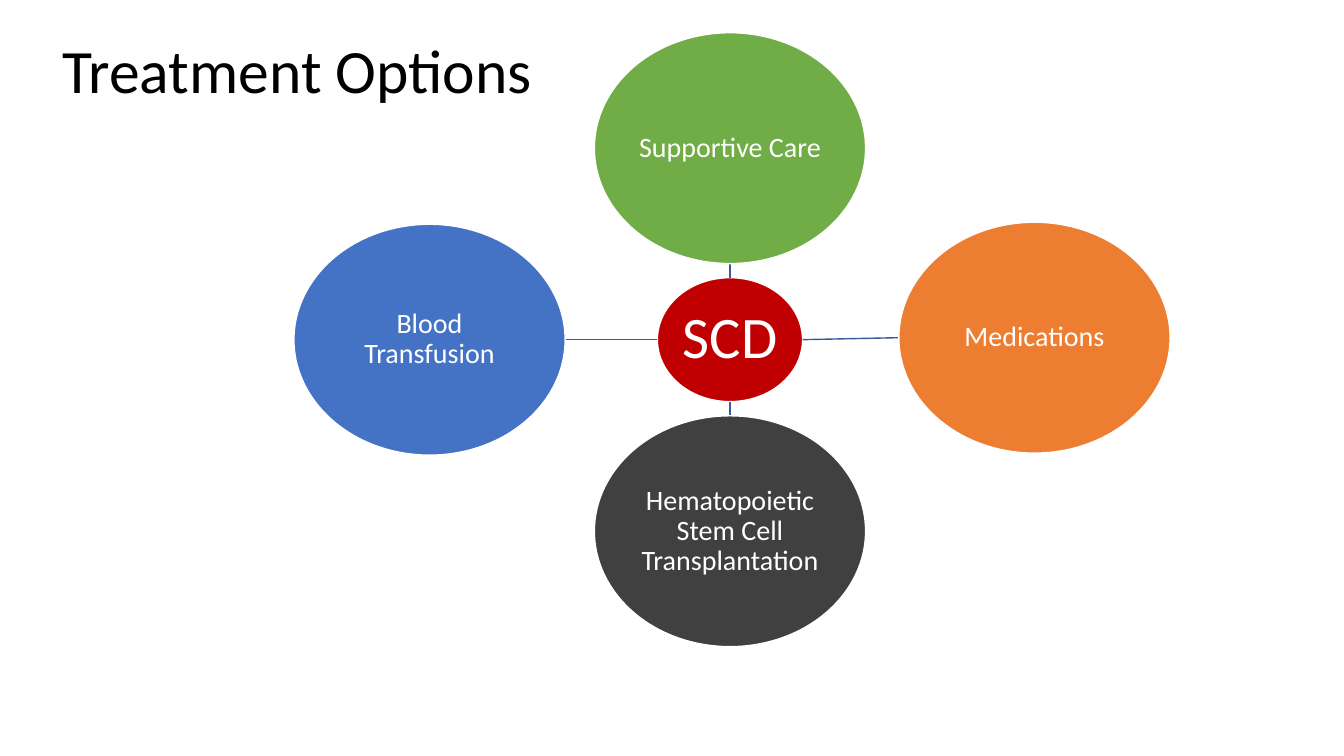
"""Build the Treatment Options slide: four therapies linked to a central SCD hub."""
from pptx import Presentation
from pptx import util as u
from pptx.dml.color import RGBColor
from pptx.enum import shapes, text
from pptx.oxml.ns import qn
from lxml import etree

COLORS = {"black": "000000", "white": "FFFFFF", "hub": "C00000", "link": "365B9D",
          "green": "70AD47", "orange": "ED7D31", "gray": "404040", "blue": "4472C4"}
HUB_X, HUB_Y = 7.24, 3.37
HUB_SIZE = (1.44, 1.23)
OPTION_SIZE = (2.69, 2.29)


def write(shape, words, size, color, align, inset):
    frame = shape.text_frame
    frame.word_wrap = True
    frame.vertical_anchor = text.MSO_ANCHOR.MIDDLE
    frame.margin_left = frame.margin_right = u.Inches(inset)
    frame.margin_top = frame.margin_bottom = u.Inches(inset / 2)
    para = frame.paragraphs[0]
    para.alignment = align
    para.line_spacing = 0.9
    span = para.add_run()
    span.text = words
    span.font.name = "Calibri"
    span.font.size = u.Pt(size)
    span.font.color.rgb = RGBColor.from_string(COLORS[color])


def add_circle(page, words, x, y, size, fill, points):
    width, height = size
    circle = page.shapes.add_shape(
        shapes.MSO_SHAPE.OVAL, u.Inches(x - width / 2), u.Inches(y - height / 2),
        u.Inches(width), u.Inches(height))
    circle.shadow.inherit = False
    circle.fill.solid()
    circle.fill.fore_color.rgb = RGBColor.from_string(COLORS[fill])
    circle.line.color.rgb = RGBColor.from_string(COLORS["white"])
    circle.line.width = u.Pt(1)
    write(circle, words, points, "white", text.PP_ALIGN.CENTER, 0)


deck = Presentation()
deck.slide_width = u.Inches(13.33)
deck.slide_height = u.Inches(7.5)
page = deck.slides.add_slide(deck.slide_layouts[6])

title = page.shapes.add_textbox(u.Inches(0.52), u.Inches(0), u.Inches(11.5), u.Inches(1.45))
write(title, "Treatment Options", 44, "black", text.PP_ALIGN.LEFT, 0.1)

add_circle(page, "SCD", HUB_X, HUB_Y, HUB_SIZE, "hub", 42)

options = [
    ("Supportive Care", "green", HUB_X, 1.47, 0, -1),
    ("Medications", "orange", 10.26, 3.35, 1, 0),
    ("Hematopoietic Stem Cell Transplantation", "gray", HUB_X, 5.27, 0, 1),
    ("Blood Transfusion", "blue", 4.26, HUB_Y, -1, 0),
]
for words, fill, x, y, side_x, side_y in options:
    link = page.shapes.add_connector(
        shapes.MSO_CONNECTOR.STRAIGHT,
        u.Inches(HUB_X + side_x * HUB_SIZE[0] / 2), u.Inches(HUB_Y + side_y * HUB_SIZE[1] / 2),
        u.Inches(x - side_x * OPTION_SIZE[0] / 2), u.Inches(y - side_y * OPTION_SIZE[1] / 2))
    link.line.color.rgb = RGBColor.from_string(COLORS["link"])
    link.line.width = u.Pt(1)
    etree.SubElement(link._element.spPr, qn("a:effectLst"))
    add_circle(page, words, x, y, OPTION_SIZE, fill, 20)

deck.save("out.pptx")
